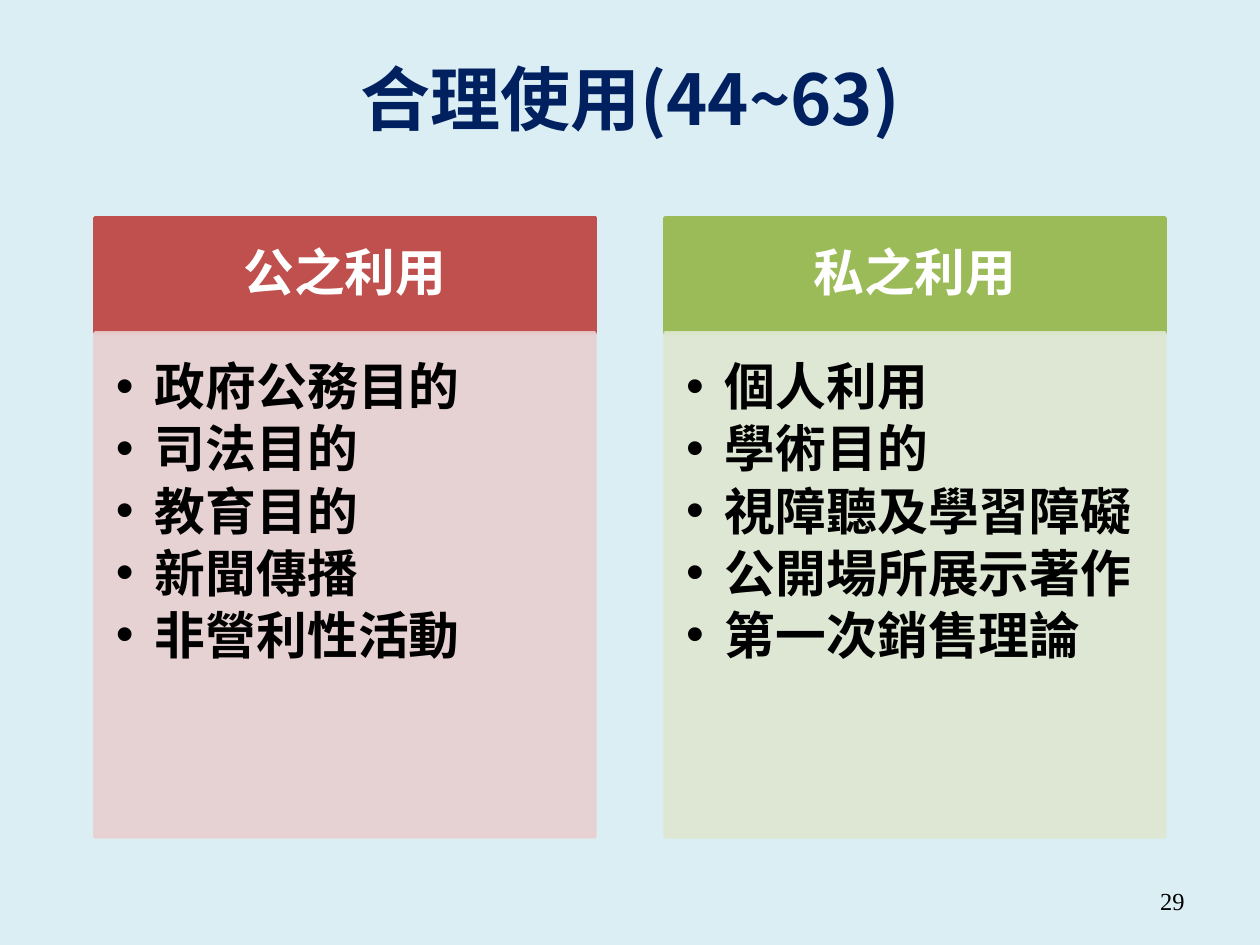
from lxml.etree import SubElement
from pptx import Presentation
from pptx.dml.color import RGBColor
from pptx.enum.shapes import MSO_SHAPE
from pptx.enum.text import MSO_ANCHOR, PP_ALIGN
from pptx.oxml.ns import qn
from pptx.util import Pt

PX = 914400 / 126
SANS = "Noto Sans CJK SC"
COLUMNS = [
    ("公之利用", "C0504D", "E8D0D0",
     ["政府公務目的", "司法目的", "教育目的", "新聞傳播", "非營利性活動"]),
    ("私之利用", "9BBB59", "DEE7D1",
     ["個人利用", "學術目的", "視障聽及學習障礙", "公開場所展示著作", "第一次銷售理論"]),
]


def px(n):
    return round(n * PX)


def paint(color, code):
    color.rgb = RGBColor.from_string(code)


def write(shape, lines, size, code, align, anchor, font=SANS, bold=True):
    frame = shape.text_frame
    frame.word_wrap = True
    frame.vertical_anchor = anchor
    frame.text = "\n".join(lines)
    for para in frame.paragraphs:
        para.alignment = align
        for run in para.runs:
            run.font.size = Pt(size)
            run.font.bold = bold
            run.font.name = font
            paint(run.font.color, code)
            SubElement(run.font._element, qn("a:ea"), typeface=font)
    return frame


def pad(frame, left, top, right, bottom):
    frame.margin_left, frame.margin_top = px(left), px(top)
    frame.margin_right, frame.margin_bottom = px(right), px(bottom)


def label(slide, box, *style, **extra):
    text = slide.shapes.add_textbox(*map(px, box))
    write(text, *style, **extra)


def block(slide, box, code, alpha=100):
    """Add a rectangle whose fill and border share a colour and opacity."""
    shape = slide.shapes.add_shape(MSO_SHAPE.RECTANGLE, *map(px, box))
    shape.shadow.inherit = False
    shape.fill.solid()
    paint(shape.fill.fore_color, code)
    paint(shape.line.color, code)
    shape.line.width = Pt(2)
    if alpha < 100:
        for color in shape._element.spPr.iter(qn("a:srgbClr")):
            SubElement(color, qn("a:alpha"), val=str(alpha * 1000))
    return shape


def bullet(para):
    props = para._p.get_or_add_pPr()
    props.set("marL", str(px(39)))
    props.set("indent", str(-px(39)))
    SubElement(props, qn("a:buFont"), typeface="Arial")
    SubElement(props, qn("a:buChar"), char="•")


def column(slide, box, name, dark, pale, items):
    """Place a header bar above a panel of bullets, together filling box."""
    left, top, width, height = box
    bar = 115
    head = block(slide, (left, top, width, bar), dark)
    frame = write(head, [name], 29, "FFFFFF", PP_ALIGN.CENTER, MSO_ANCHOR.MIDDLE)
    pad(frame, 29, 16, 29, 16)
    frame.paragraphs[0].line_spacing = 0.9

    body = block(slide, (left, top + bar, width, height - bar), pale, 90)
    frame = write(body, items, 29, "000000", PP_ALIGN.LEFT, MSO_ANCHOR.TOP)
    pad(frame, 21, 21, 29, 32)
    for para in frame.paragraphs:
        para.line_spacing = Pt(35.5)
        bullet(para)


def main():
    deck = Presentation()
    deck.slide_width, deck.slide_height = px(1260), px(945)
    slide = deck.slides.add_slide(deck.slide_layouts[6])
    slide.background.fill.solid()
    paint(slide.background.fill.fore_color, "DBEEF4")

    label(slide, (333, 37, 594, 121), ["合理使用(44~63)"], 40, "002060",
          PP_ALIGN.CENTER, MSO_ANCHOR.MIDDLE)
    for i, data in enumerate(COLUMNS):
        column(slide, (95 + i * 570, 218, 500, 619), *data)
    label(slide, (903, 876, 294, 50), ["29"], 14, "000000", PP_ALIGN.RIGHT,
          MSO_ANCHOR.MIDDLE, font="Times New Roman", bold=False)
    deck.save("out.pptx")


if __name__ == "__main__":
    main()
